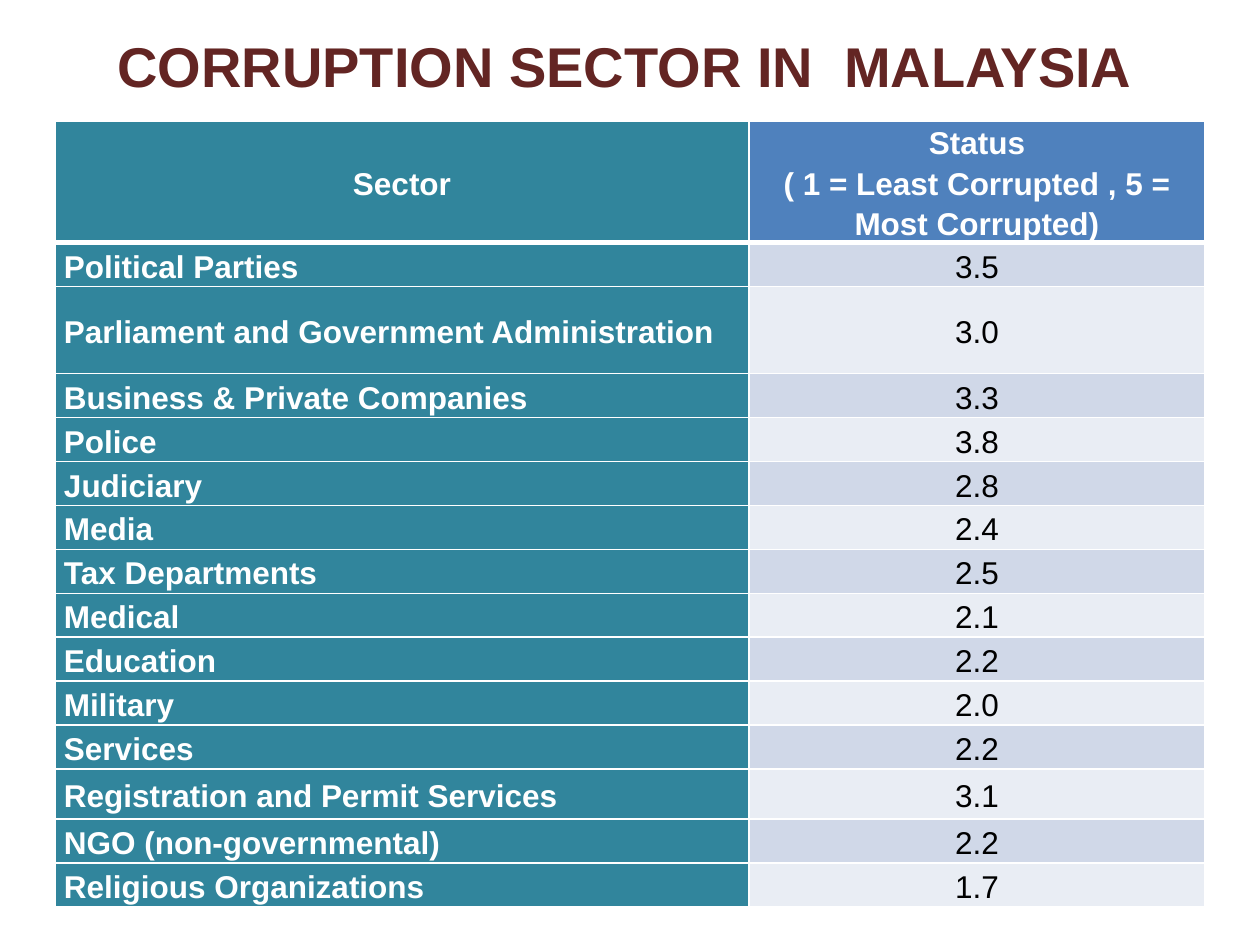
import lxml.etree
import pptx
import pptx.dml.color
import pptx.enum.text
import pptx.oxml.ns
import pptx.util

ALIGN = pptx.enum.text.PP_ALIGN
MIDDLE = pptx.enum.text.MSO_ANCHOR.MIDDLE


class Theme:
    font = "Arial"
    title_size, table_size = 32, 18
    title, white, black = "632523", "FFFFFF", "000000"
    teal, blue = "31859C", "4F81BD"
    bands = ("D0D8E8", "E9EDF4")
    line_spacing = 1.15
    rule, header_rule = 1, 3


TITLE = "CORRUPTION SECTOR IN  MALAYSIA"
HEADER = ("Sector", "Status\n( 1 = Least Corrupted , 5 = Most Corrupted)")
RATINGS = (
    ("Political Parties", "3.5"),
    ("Parliament and Government Administration", "3.0"),
    ("Business & Private Companies", "3.3"),
    ("Police", "3.8"),
    ("Judiciary", "2.8"),
    ("Media", "2.4"),
    ("Tax Departments", "2.5"),
    ("Medical", "2.1"),
    ("Education", "2.2"),
    ("Military", "2.0"),
    ("Services", "2.2"),
    ("Registration and Permit Services", "3.1"),
    ("NGO (non-governmental)", "2.2"),
    ("Religious Organizations", "1.7"),
)
# Row heights in px; every row not listed has the usual height
USUAL_ROW = 44
SPECIAL_ROWS = {0: 110, 2: 87, 12: 50}
COLUMNS = (694, 456)


def px(length):
    return pptx.util.Emu(round(length * 914400 / 126))


def set_all(target, values):
    for name, value in values.items():
        setattr(target, name, value)


def write(frame, text, size, color, bold, align, spacing=None):
    frame.text = text
    for para in frame.paragraphs:
        set_all(para, {"alignment": align, "line_spacing": spacing})
        for span in para.runs:
            set_all(span.font, {"name": Theme.font, "size": pptx.util.Pt(size), "bold": bold})
            span.font.color.rgb = pptx.dml.color.RGBColor.from_string(color)


def add_borders(cell, widths):
    """Draw white borders; they must stand before the fill in the cell properties."""
    properties = cell._tc.get_or_add_tcPr()
    qn = pptx.oxml.ns.qn
    for index, (side, width) in enumerate(widths.items()):
        line = lxml.etree.Element(qn("a:ln" + side), w=str(pptx.util.Pt(width)))
        fill = lxml.etree.SubElement(line, qn("a:solidFill"))
        lxml.etree.SubElement(fill, qn("a:srgbClr"), val=Theme.white)
        properties.insert(index, line)


def style_cell(cell, text, fill, color, bold, align, top, bottom):
    set_all(cell, {"margin_left": px(9), "margin_right": px(9),
                   "margin_top": 0, "margin_bottom": 0, "vertical_anchor": MIDDLE})
    cell.fill.solid()
    cell.fill.fore_color.rgb = pptx.dml.color.RGBColor.from_string(fill)
    add_borders(cell, {"L": Theme.rule, "R": Theme.rule, "T": top, "B": bottom})
    write(cell.text_frame, text, Theme.table_size, color, bold, align, Theme.line_spacing)


def add_title(page, left, top, width, height):
    box = page.shapes.add_textbox(px(left), px(top), px(width), px(height))
    box.text_frame.word_wrap = True
    write(box.text_frame, TITLE, Theme.title_size, Theme.title, True, ALIGN.CENTER)


def add_ratings_table(page, left, top):
    heights = [SPECIAL_ROWS.get(index, USUAL_ROW) for index in range(len(RATINGS) + 1)]
    table = page.shapes.add_table(len(heights), len(COLUMNS), px(left), px(top),
                                  px(sum(COLUMNS)), px(sum(heights))).table
    for column, width in zip(table.columns, COLUMNS):
        column.width = px(width)
    for row, height in zip(table.rows, heights):
        row.height = px(height)

    # Header row
    for column, (text, fill) in enumerate(zip(HEADER, (Theme.teal, Theme.blue))):
        style_cell(table.cell(0, column), text, fill, Theme.white, True, ALIGN.CENTER,
                   Theme.rule, Theme.header_rule)

    # Sector names on teal, scores on alternating bands
    for row, (sector, score) in enumerate(RATINGS, start=1):
        top_rule = Theme.header_rule if row == 1 else Theme.rule
        style_cell(table.cell(row, 0), sector, Theme.teal, Theme.white, True, ALIGN.LEFT,
                   top_rule, Theme.rule)
        style_cell(table.cell(row, 1), score, Theme.bands[(row - 1) % 2], Theme.black, False,
                   ALIGN.CENTER, top_rule, Theme.rule)


def main():
    deck = pptx.Presentation()
    set_all(deck, {"slide_width": px(1260), "slide_height": px(945)})
    page = deck.slides.add_slide(deck.slide_layouts[6])
    add_ratings_table(page, 55, 121)
    add_title(page, 25, 25, 1200, 81)
    deck.save("out.pptx")


if __name__ == "__main__":
    main()
